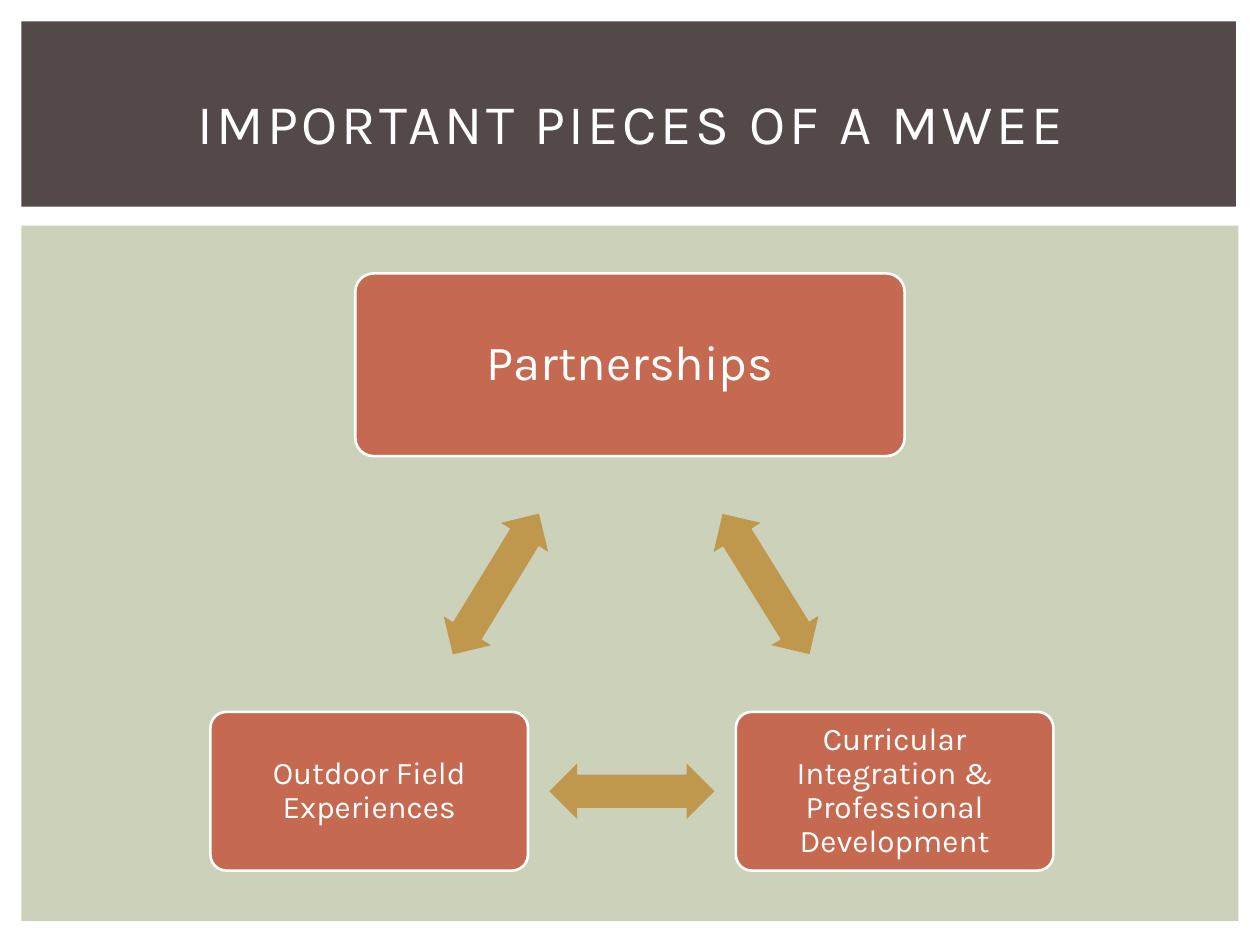
import math

from pptx import Presentation
from pptx import util as u
from pptx.dml.color import RGBColor
from pptx.enum import shapes, text

COLUMNS, ROWS = 100, 75
CELL = u.Inches(0.1)
FONT = "Karla"
WHITE, BROWN, SAGE, RUST, GOLD = "FFFFFF", "534949", "CCD1B9", "C66951", "BF974D"


def grid(cells):
    return u.Emu(round(cells * CELL))


def color(hex_code):
    return RGBColor.from_string(hex_code)


def set_all(target, values):
    for name, value in values.items():
        setattr(target, name, value)


def add_block(page, kind, area, fill, outline=None):
    """Add a flat preset shape; area is left, top, width, height in grid cells."""
    block = page.shapes.add_shape(kind, *map(grid, area))
    block.shadow.inherit = False
    block.fill.solid()
    block.fill.fore_color.rgb = color(fill)
    if outline:
        block.line.color.rgb = color(outline)
        block.line.width = u.Pt(1.5)
    else:
        block.line.fill.background()
    return block


def write(shape, words, size, inset=(1, 0.5), line_spacing=1.0):
    """Centre white words in a shape; inset is horizontal, vertical in cells."""
    frame = shape.text_frame
    across, down = map(grid, inset)
    set_all(frame, {
        "word_wrap": True, "vertical_anchor": text.MSO_ANCHOR.MIDDLE,
        "margin_left": across, "margin_right": across,
        "margin_top": down, "margin_bottom": down,
    })
    para = frame.paragraphs[0]
    set_all(para, {"alignment": text.PP_ALIGN.CENTER, "line_spacing": line_spacing})
    span = para.add_run()
    span.text = words
    set_all(span.font, {"name": FONT, "size": u.Pt(size)})
    span.font.color.rgb = color(WHITE)
    return span


def add_title(page, words):
    box = page.shapes.add_textbox(*map(grid, (4.2, 3.9, 91.7, 11.5)))
    span = write(box, words, 32)
    span.font._element.set("spc", "200")


def add_card(page, area, words, size, inset):
    card = add_block(page, shapes.MSO_SHAPE.ROUNDED_RECTANGLE, area, RUST, WHITE)
    card.adjustments[0] = 0.1
    write(card, words, size, (inset, inset), 0.9)


def add_double_arrow(page, start, end):
    """Put an arrow on the line between two card centres, midway in their gap."""
    (x1, y1, w1, h1), (x2, y2, w2, h2) = start, end
    from_x, from_y = x1 + w1 / 2, y1 + h1 / 2
    run, rise = x2 + w2 / 2 - from_x, y2 + h2 / 2 - from_y
    if rise:
        share = ((h1 / 2) + (abs(rise) - h2 / 2)) / 2 / abs(rise)
    else:
        share = 0.5
    width, height = 13.1, 4.4
    area = (from_x + run * share - width / 2,
            from_y + rise * share - height / 2, width, height)
    arrow = add_block(page, shapes.MSO_SHAPE.LEFT_RIGHT_ARROW, area, GOLD)
    arrow.adjustments[0], arrow.adjustments[1] = 0.6, 0.5
    arrow.rotation = math.degrees(math.atan2(rise, run)) % 360


def main():
    deck = Presentation()
    deck.slide_width, deck.slide_height = grid(COLUMNS), grid(ROWS)
    page = deck.slides.add_slide(deck.slide_layouts[6])

    rectangle = shapes.MSO_SHAPE.RECTANGLE
    add_block(page, rectangle, (1.7, 17.9, 96.6, 55.2), SAGE)
    add_block(page, rectangle, (1.7, 1.7, 96.4, 14.7), BROWN)

    top = (28.2, 21.7, 43.6, 14.5)
    right, left = ((x, 56.5, 25.2, 12.6) for x in (58.4, 16.7))
    add_card(page, top, "Partnerships", 28, 1.2)
    add_card(page, right, "Curricular Integration & Professional Development", 18, 0.7)
    add_card(page, left, "Outdoor Field Experiences", 18, 0.7)
    for start, end in ((top, right), (right, left), (left, top)):
        add_double_arrow(page, start, end)

    add_title(page, "IMPORTANT PIECES OF A MWEE")
    deck.save("out.pptx")


if __name__ == "__main__":
    main()
